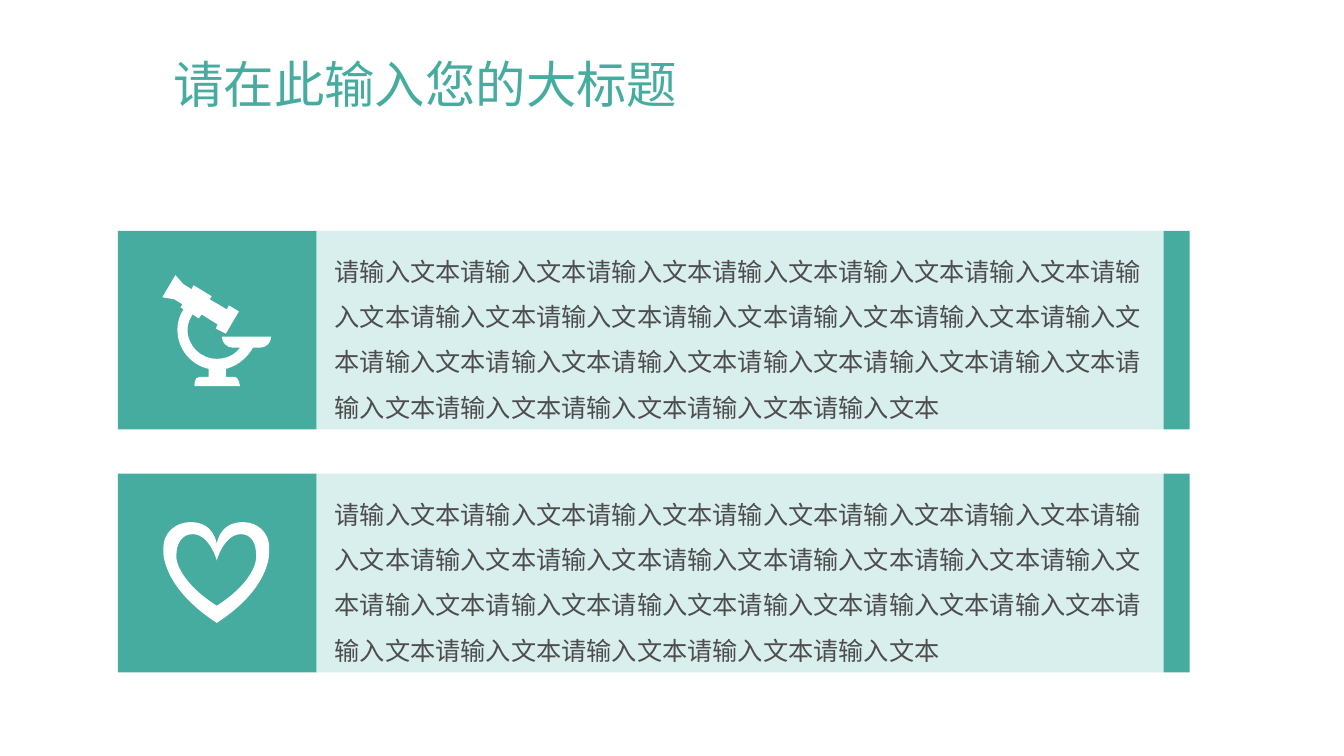
"""Build a title slide with two icon cards of body text."""
from pptx import Presentation
from pptx.dml.color import RGBColor
from pptx.enum.shapes import MSO_SHAPE
from pptx.enum.text import MSO_ANCHOR
from pptx.oxml.ns import qn
from pptx.util import Inches, Pt
from lxml.etree import SubElement

TEAL = RGBColor(0x46, 0xAC, 0xA0)
PALE_TEAL = RGBColor(0xD9, 0xEF, 0xED)
GRAY = RGBColor(0x4D, 0x4D, 0x4D)
WHITE = RGBColor(0xFF, 0xFF, 0xFF)
FONT = "Noto Sans CJK SC"

TITLE = "请在此输入您的大标题"
BODY = "请输入文本" * 24

MICROSCOPE = [[
    (2.14, 3.26), (2.16, 3.22), (2, 3.12), (1.97, 3.16), (1.91, 3.12),
    (1.88, 3.17, 1.86, 3.22, 1.86, 3.27), (1.86, 3.43, 1.99, 3.56, 2.15, 3.56),
    (2.25, 3.56, 2.33, 3.52, 2.38, 3.45), (2.31, 3.45),
    (2.25, 3.45, 2.2, 3.4, 2.2, 3.34), (2.69, 3.34),
    (2.69, 3.4, 2.64, 3.45, 2.58, 3.45), (2.51, 3.45),
    (2.45, 3.55, 2.36, 3.63, 2.24, 3.66), (2.24, 3.74), (2.33, 3.74),
    (2.37, 3.74, 2.38, 3.83, 2.38, 3.83), (1.93, 3.83),
    (1.93, 3.83, 1.92, 3.74, 1.98, 3.74), (2.07, 3.74), (2.07, 3.66),
    (1.89, 3.62, 1.76, 3.46, 1.76, 3.27), (1.76, 3.2, 1.78, 3.13, 1.82, 3.07),
    (1.79, 3.05), (1.81, 3.02), (1.73, 2.97), (1.61, 2.95), (1.74, 2.73),
    (1.82, 2.82), (1.9, 2.87), (1.92, 2.83), (2.1, 2.94), (2.08, 2.97),
    (2.25, 3.07), (2.27, 3.03), (2.37, 3.09), (2.24, 3.31),
]]
HEART = [
    [(2.15, 6.18), (1.61, 5.83, 1.62, 5.48, 1.62, 5.48),
     (1.62, 5.48, 1.62, 5.46, 1.62, 5.43), (1.62, 5.29, 1.74, 5.18, 1.89, 5.18),
     (2.13, 5.18, 2.15, 5.4, 2.15, 5.4), (2.15, 5.4, 2.17, 5.18, 2.41, 5.18),
     (2.56, 5.18, 2.67, 5.29, 2.67, 5.43), (2.67, 5.46, 2.67, 5.48, 2.67, 5.48),
     (2.67, 5.48, 2.69, 5.83, 2.15, 6.18)],
    [(2.54, 5.5), (2.54, 5.4, 2.5, 5.3, 2.39, 5.3),
     (2.22, 5.3, 2.15, 5.56, 2.15, 5.56), (2.15, 5.56, 2.08, 5.3, 1.91, 5.3),
     (1.8, 5.3, 1.75, 5.4, 1.75, 5.5), (1.75, 5.52, 1.75, 5.54, 1.75, 5.54),
     (1.75, 5.54, 1.76, 5.76, 2.15, 6.01), (2.54, 5.76, 2.54, 5.54, 2.54, 5.54),
     (2.54, 5.54, 2.54, 5.52, 2.54, 5.5)],
]
CARDS = [(MICROSCOPE, BODY), (HEART, BODY)]

CARD_TOP, CARD_HEIGHT, CARD_PITCH = 2.29, 1.97, 2.41
CARD_PARTS = [(1.17, 1.97, TEAL), (3.14, 8.41, PALE_TEAL), (11.54, 0.26, TEAL)]


def add_text(slide, text, left, top, width, height, size, color, spacing):
    box = slide.shapes.add_textbox(*map(Inches, (left, top, width, height)))
    frame = box.text_frame
    frame.word_wrap = True
    frame.vertical_anchor = MSO_ANCHOR.MIDDLE
    paragraph = frame.paragraphs[0]
    paragraph.line_spacing = spacing
    run = paragraph.add_run()
    run.text = text
    run.font.size = Pt(size)
    run.font.color.rgb = color
    run.font.name = FONT
    SubElement(run.font._element, qn("a:ea")).set("typeface", FONT)


def paint(shape, color):
    shape.shadow.inherit = False
    shape.fill.solid()
    shape.fill.fore_color.rgb = color
    shape.line.fill.background()


def bend(line, segment, left, top):
    line.tag = qn("a:cubicBezTo")
    for point in list(line):
        line.remove(point)
    for x, y in zip(segment[::2], segment[1::2]):
        point = SubElement(line, qn("a:pt"))
        point.set("x", str(Inches(x) - left))
        point.set("y", str(Inches(y) - top))


def add_icon(slide, contours):
    builder = slide.shapes.build_freeform(*map(Inches, contours[0][0]))
    for index, contour in enumerate(contours):
        ends = [tuple(map(Inches, segment[-2:])) for segment in contour]
        if index:
            builder.move_to(*ends[0])
        builder.add_line_segments(ends[1:], close=True)
    icon = builder.convert_to_shape()
    paint(icon, WHITE)
    segments = [segment for contour in contours for segment in contour[1:]]
    lines = list(icon._element.iter(qn("a:lnTo")))
    for line, segment in zip(lines, segments):
        if len(segment) == 6:
            bend(line, segment, icon.left, icon.top)


def main():
    presentation = Presentation()
    presentation.slide_width, presentation.slide_height = Inches(13.33), Inches(7.5)
    slide = presentation.slides.add_slide(presentation.slide_layouts[6])
    add_text(slide, TITLE, 1.62, 0.4, 10.88, 0.93, size=36, color=TEAL, spacing=0.9)
    for index, (icon, body) in enumerate(CARDS):
        top = CARD_TOP + index * CARD_PITCH
        for left, width, color in CARD_PARTS:
            paint(slide.shapes.add_shape(MSO_SHAPE.RECTANGLE, Inches(left), Inches(top),
                                         Inches(width), Inches(CARD_HEIGHT)), color)
        add_text(slide, body, 3.22, top + 0.08, 8.28, 1.84, size=18, color=GRAY, spacing=1.5)
        add_icon(slide, icon)
    presentation.save("out.pptx")


if __name__ == "__main__":
    main()
